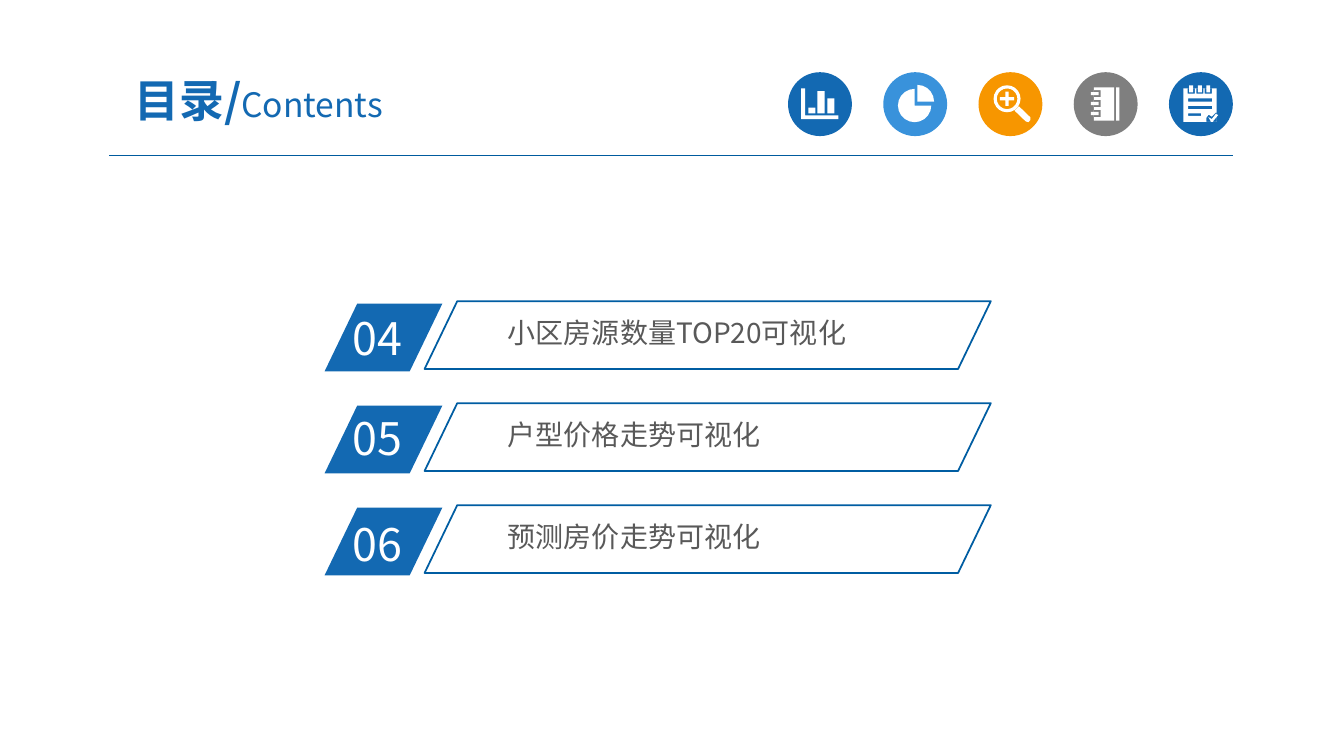
from math import cos, radians, sin

from lxml.etree import SubElement
from pptx import Presentation
from pptx.dml.color import RGBColor
from pptx.enum.shapes import MSO_CONNECTOR, MSO_SHAPE
from pptx.enum.text import MSO_ANCHOR, PP_ALIGN
from pptx.oxml.ns import qn
from pptx.util import Cm, Pt

COLORS = {
    "blue": "1369B2", "sky": "3992DB", "orange": "F79600", "gray": "7F7F7F",
    "rule": "005B9E", "outline": "005DA2", "text": "595959", "white": "FFFFFF",
}
BADGE_SIZE = 1.61


def arc(x, y, radius, start=0, end=360):
    """Points on an arc, in degrees clockwise from the right."""
    steps = (end - start) // 18
    angles = [radians(start + 18 * i) for i in range(steps + 1)]
    return [(x + radius * cos(a), y + radius * sin(a)) for a in angles]


def bar(x, y, width, height):
    """Outline of a rectangle."""
    return [(x, y), (x + width, y), (x + width, y + height), (x, y + height)]


# Each icon is a list of outlines in cm inside its badge; nested outlines cut holes.
def chart_icon():
    axes = [(0.33, 0.41), (0.43, 0.41), (0.43, 1.09), (1.27, 1.09), (1.27, 1.18), (0.33, 1.18)]
    columns = [(0.51, 0.89), (0.74, 0.48), (0.99, 0.66)]
    return [axes] + [bar(x, top, 0.18, 1.04 - top) for x, top in columns]


def pie_icon():
    return [[(0.79, 0.84)] + arc(0.79, 0.84, 0.42, 0, 270),
            [(0.86, 0.74)] + arc(0.86, 0.74, 0.42, 270, 360)]


def magnifier_icon():
    x, y = 0.72, 0.67
    plus = [bar(x - 0.04, y - 0.18, 0.08, 0.14), bar(x - 0.18, y - 0.04, 0.36, 0.08),
            bar(x - 0.04, y + 0.04, 0.08, 0.14)]
    handle = [(0.91, 0.97), (1.02, 0.86), (1.31, 1.14), (1.31, 1.2), (1.26, 1.26), (1.19, 1.24)]
    return [arc(x, y, 0.34), arc(x, y, 0.26), handle] + plus


def notebook_icon():
    outlines = [bar(0.51, 0.38, 0.51, 0.84), bar(1.07, 0.38, 0.08, 0.84)]
    for y in (0.54, 0.79, 1.04):
        outlines += [bar(0.51, y - 0.09, 0.17, 0.18), bar(0.43, y - 0.04, 0.2, 0.08)]
    return outlines


def checklist_icon():
    outlines = [bar(0.36, 0.41, 0.84, 0.84)]
    for x in (0.56, 0.78, 0.99):
        outlines += [bar(x - 0.09, 0.41, 0.18, 0.13), bar(x - 0.05, 0.33, 0.1, 0.18)]
    outlines += [bar(0.48, y, width, height)
                 for y, width, height in [(0.66, 0.61, 0.08), (0.85, 0.61, 0.08), (1.04, 0.33, 0.06)]]
    corner = [(0.94, 1.25), (0.94, 1.15), (1.0, 1.07), (1.08, 1.12), (1.18, 1.02),
              (1.2, 1.02), (1.2, 1.25)]
    tick = [(0.99, 1.13), (1.08, 1.18), (1.18, 1.05), (1.24, 1.08), (1.1, 1.25), (1.06, 1.25)]
    return outlines + [corner, tick]


class SlideWriter:
    font = "Noto Sans CJK SC"

    def __init__(self, page):
        self.shapes = page.shapes

    def color(self, name):
        return RGBColor.from_string(COLORS[name])

    def paint(self, shape, fill=None, line=None):
        shape.shadow.inherit = False
        if fill:
            shape.fill.solid()
            shape.fill.fore_color.rgb = self.color(fill)
        else:
            shape.fill.background()
        if line:
            shape.line.color.rgb = self.color(line)
            shape.line.width = Pt(1.25)
        else:
            shape.line.fill.background()

    def preset(self, kind, x, y, width, height, fill=None, line=None):
        shape = self.shapes.add_shape(kind, Cm(x), Cm(y), Cm(width), Cm(height))
        self.paint(shape, fill, line)
        return shape

    def slanted(self, x, y, width, height, fill=None, line=None):
        shape = self.preset(MSO_SHAPE.PARALLELOGRAM, x, y, width, height, fill, line)
        shape.adjustments[0] = 0.482

    def badge(self, x, y, fill, outlines):
        """Round badge with a white icon."""
        self.preset(MSO_SHAPE.OVAL, x, y, BADGE_SIZE, BADGE_SIZE, fill)
        placed = [[(Cm(x + px), Cm(y + py)) for px, py in points] for points in outlines]
        builder = self.shapes.build_freeform(*placed[0][0])
        for index, points in enumerate(placed):
            if index:
                builder.move_to(*points[0])
            builder.add_line_segments(points[1:], close=True)
        self.paint(builder.convert_to_shape(), "white")

    def rule(self, x, y, end_x):
        line = self.shapes.add_connector(MSO_CONNECTOR.STRAIGHT, Cm(x), Cm(y), Cm(end_x), Cm(y))
        line.line.color.rgb = self.color("rule")
        line.line.width = Pt(0.75)
        SubElement(line._element.spPr, qn("a:effectLst"))

    def text(self, x, y, width, height, spans, color, inset=(0.25, 0.13),
             anchor=MSO_ANCHOR.TOP, align=PP_ALIGN.LEFT):
        """Text box with one paragraph; spans are (text, size, bold)."""
        frame = self.shapes.add_textbox(Cm(x), Cm(y), Cm(width), Cm(height)).text_frame
        frame.word_wrap = True
        frame.vertical_anchor = anchor
        frame.margin_left = frame.margin_right = Cm(inset[0])
        frame.margin_top = frame.margin_bottom = Cm(inset[1])
        para = frame.paragraphs[0]
        para.alignment = align
        for words, size, bold in spans:
            span = para.add_run()
            span.text = words
            span.font.size = Pt(size)
            span.font.bold = bold
            span.font.color.rgb = self.color(color)
            span.font.name = self.font
            SubElement(span.font._element, qn("a:ea"), typeface=self.font)


def main():
    deck = Presentation()
    deck.slide_width, deck.slide_height = Cm(33.87), Cm(19.05)
    writer = SlideWriter(deck.slides.add_slide(deck.slide_layouts[6]))

    writer.rule(2.75, 3.93, 31.07)
    badges = [("blue", chart_icon), ("sky", pie_icon), ("orange", magnifier_icon),
              ("gray", notebook_icon), ("blue", checklist_icon)]
    for index, (fill, icon) in enumerate(badges):
        writer.badge(19.86 + 2.4 * index, 1.82, fill, icon())

    writer.text(2.34, 1.6, 8.36, 1.83, [("目录/", 32, True), ("Contents", 24, False)],
                "blue", (0.33, 0.18), MSO_ANCHOR.MIDDLE, PP_ALIGN.CENTER)

    chapters = [("04", 7.7, "小区房源数量TOP20可视化"),
                ("05", 10.21, "户型价格走势可视化"),
                ("06", 12.88, "预测房价走势可视化")]
    for index, (number, number_top, title) in enumerate(chapters):
        top = 7.59 + 2.57 * index
        writer.slanted(8.18, top + 0.06, 2.97, 1.71, fill="blue")
        writer.text(8.64, number_top, 2.84, 1.63, [(number, 32, False)], "white")
        writer.text(12.62, top + 0.26, 10.46, 1.04, [(title, 20, False)], "text", (0.18, 0.1))
        writer.slanted(10.7, top, 14.27, 1.71, line="outline")

    deck.save("out.pptx")


if __name__ == "__main__":
    main()
